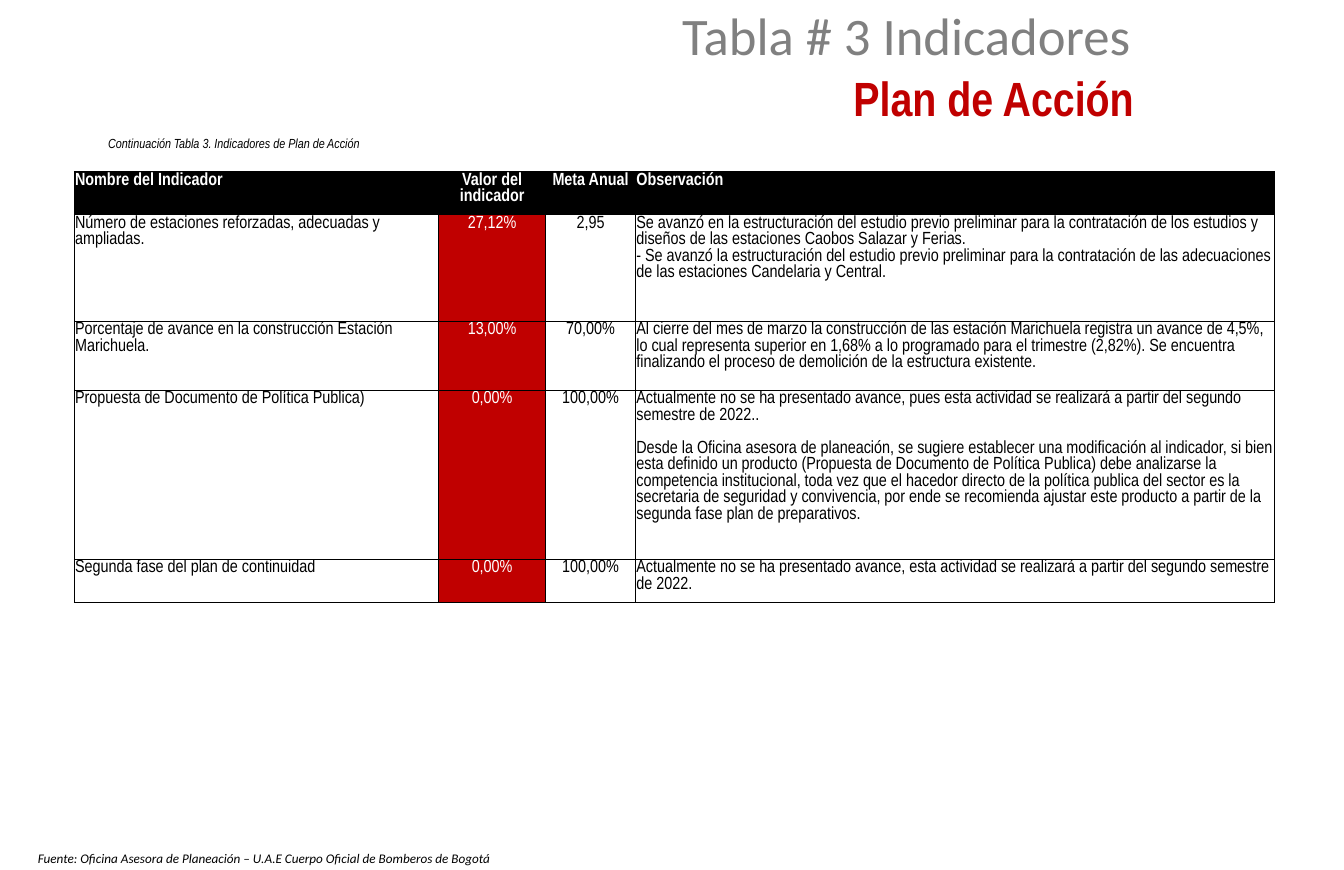
from dataclasses import dataclass

from lxml.etree import SubElement
from pptx import Presentation
from pptx.dml.color import RGBColor
from pptx.enum.text import MSO_ANCHOR as Anchor, PP_ALIGN as Align
from pptx.oxml.ns import qn
from pptx.slide import Slide
from pptx.table import _Cell as Cell
from pptx.text.text import TextFrame
from pptx.util import Inches, Pt

WIDTH, HEIGHT = Inches(17), Inches(11)
COL, ROW = WIDTH / 170, HEIGHT / 110
COLORS = {"black": "000000", "white": "FFFFFF", "red": "C00000", "gray": "808080"}
NARROW, SANS = "Arial Narrow", "Calibri"


@dataclass(frozen=True)
class Style:
    size: float
    font: str
    color: str
    bold: bool = False
    italic: bool = False
    align: Align = Align.LEFT


@dataclass(frozen=True)
class Label:
    text: str
    left: float
    top: float
    width: float
    height: float
    style: Style
    right_inset: float = 1
    anchor: Anchor = Anchor.TOP


@dataclass(frozen=True)
class Column:
    width: float
    align: Align = Align.LEFT
    fill: str | None = None
    color: str = "black"


@dataclass(frozen=True)
class Indicator:
    height: float
    texts: tuple[str, str, str, str]


LABELS = [
    Label("Tabla # 3 Indicadores", 85.3, -0.1, 62.2, 9.1, Style(48, SANS, "gray")),
    Label("Plan de Acción", 103.3, 8, 49.3, 8.6,
          Style(43.7, NARROW, "red", bold=True, align=Align.CENTER), 5.5, Anchor.MIDDLE),
    Label("Continuación Tabla 3. Indicadores de Plan de Acción", 12.7, 16.6, 68.9, 3,
          Style(12, NARROW, "black", italic=True)),
    Label("Fuente: Oficina Asesora de Planeación – U.A.E Cuerpo Oficial de Bomberos de Bogotá",
          3.8, 107, 77.7, 3, Style(12, SANS, "black", italic=True)),
]
COLUMNS = [
    Column(46.1),
    Column(13.5, Align.CENTER, "red", "white"),
    Column(11.4, Align.CENTER),
    Column(80.8),
]
HEADER = Indicator(5.3, ("Nombre del Indicador", "Valor del indicador", "Meta Anual", "Observación"))
INDICATORS = [
    Indicator(13.5, (
        "Número de estaciones reforzadas, adecuadas y ampliadas.", "27,12%", "2,95",
        "Se avanzó en la estructuración del estudio previo preliminar para la contratación de los "
        "estudios y diseños de las estaciones Caobos Salazar y Ferias.\v"
        "- Se avanzó la estructuración del estudio previo preliminar para la contratación de las "
        "adecuaciones de las estaciones Candelaria y Central.")),
    Indicator(8.7, (
        "Porcentaje de avance en la construcción Estación Marichuela.", "13,00%", "70,00%",
        "Al cierre del mes de marzo la construcción de las estación Marichuela registra un avance "
        "de 4,5%, lo cual representa superior en 1,68% a lo programado para el trimestre (2,82%). "
        "Se encuentra finalizando el proceso de demolición de la estructura existente.")),
    Indicator(21.4, (
        "Propuesta de Documento de Política Publica)", "0,00%", "100,00%",
        "Actualmente no se ha presentado avance, pues esta actividad se realizará a partir del "
        "segundo semestre de 2022..\n"
        "Desde la Oficina asesora de planeación, se sugiere establecer una modificación al "
        "indicador, si bien esta definido un producto (Propuesta de Documento de Política Publica) "
        "debe analizarse la competencia institucional, toda vez que el hacedor directo de la "
        "política publica del sector es la secretaria de seguridad y convivencia, por ende se "
        "recomienda ajustar este producto a partir de la segunda fase plan de preparativos.")),
    Indicator(5.4, (
        "Segunda fase del plan de continuidad", "0,00%", "100,00%",
        "Actualmente no se ha presentado avance, esta actividad se realizará a partir del segundo "
        "semestre de 2022.")),
]


def rgb(name: str) -> RGBColor:
    return RGBColor.from_string(COLORS[name])


def write(tf: TextFrame, text: str, style: Style) -> None:
    tf.text = text
    for i, p in enumerate(tf.paragraphs):
        p.alignment = style.align
        if i:
            p.space_before = Pt(15)
        for r in p.runs:
            r.font.size = Pt(style.size)
            r.font.name = style.font
            r.font.bold = style.bold
            r.font.italic = style.italic
            r.font.color.rgb = rgb(style.color)


def add_label(s: Slide, label: Label) -> None:
    sp = s.shapes.add_textbox(int(label.left * COL), int(label.top * ROW),
                              int(label.width * COL), int(label.height * ROW))
    tf = sp.text_frame
    tf.word_wrap = True
    tf.vertical_anchor = label.anchor
    tf.margin_right = int(label.right_inset * COL)
    write(tf, label.text, label.style)


def add_borders(cell: Cell) -> None:
    props = cell._tc.get_or_add_tcPr()
    for i, side in enumerate(("lnL", "lnR", "lnT", "lnB")):
        line = props.makeelement(qn(f"a:{side}"), {"w": str(Pt(1))})
        fill = SubElement(line, qn("a:solidFill"))
        SubElement(fill, qn("a:srgbClr"), val=COLORS["black"])
        props.insert(i, line)


def fill_cell(cell: Cell, text: str, column: Column, header: bool) -> None:
    cell.margin_left = cell.margin_right = cell.margin_top = Inches(0.01)
    cell.margin_bottom = 0
    fill = "black" if header else column.fill
    if fill:
        cell.fill.solid()
        cell.fill.fore_color.rgb = rgb(fill)
    else:
        cell.fill.background()
    add_borders(cell)
    color = "white" if header else column.color
    write(cell.text_frame, text, Style(16, NARROW, color, bold=header, align=column.align))


def add_indicators(s: Slide, left: float, top: float) -> None:
    rows = [HEADER, *INDICATORS]
    width = sum(c.width for c in COLUMNS)
    height = sum(r.height for r in rows)
    table = s.shapes.add_table(len(rows), len(COLUMNS), int(left * COL), int(top * ROW),
                               int(width * COL), int(height * ROW)).table
    table.horz_banding = False
    for j, column in enumerate(COLUMNS):
        table.columns[j].width = int(column.width * COL)
    for i, row in enumerate(rows):
        table.rows[i].height = int(row.height * ROW)
        for j, (text, column) in enumerate(zip(row.texts, COLUMNS)):
            fill_cell(table.cell(i, j), text, column, row is HEADER)


def main() -> None:
    prs = Presentation()
    prs.slide_width, prs.slide_height = WIDTH, HEIGHT
    s = prs.slides.add_slide(prs.slide_layouts[6])
    for label in LABELS:
        add_label(s, label)
    add_indicators(s, 9.4, 21.7)
    prs.save("out.pptx")


if __name__ == "__main__":
    main()
